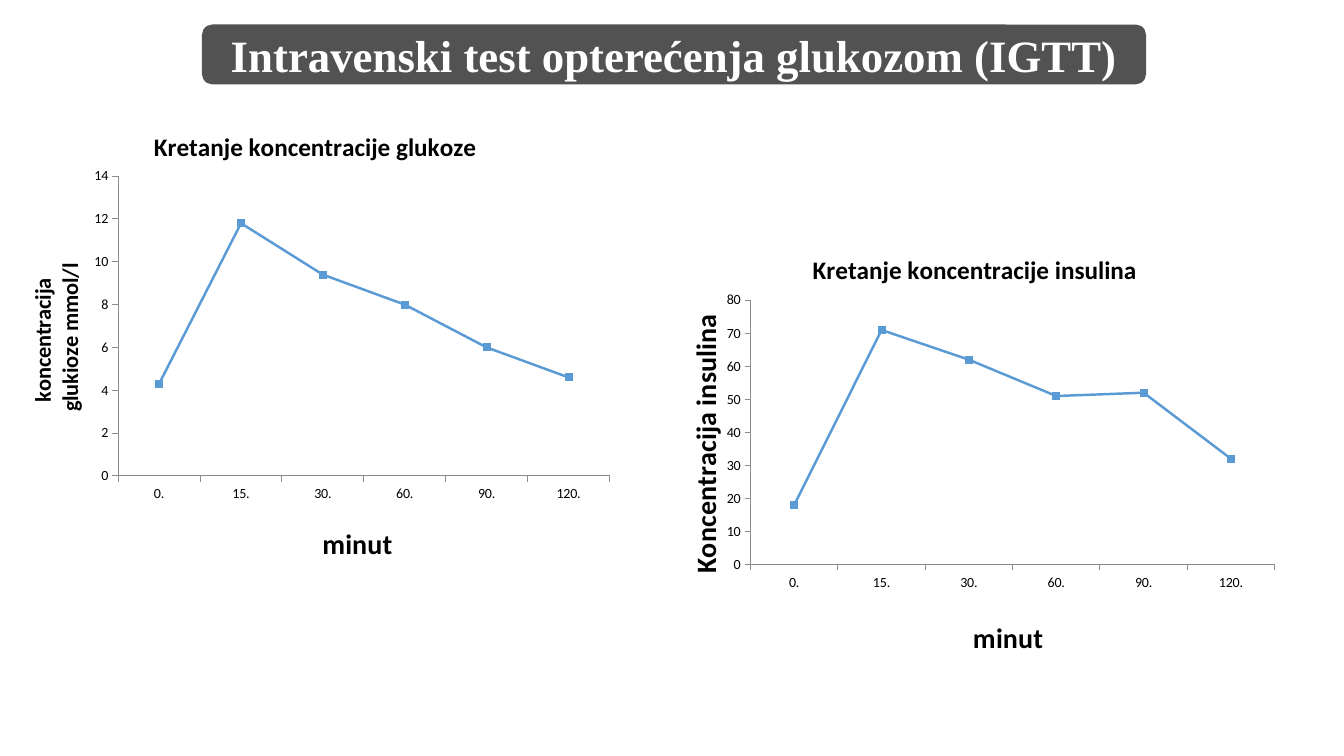
from dataclasses import dataclass

from lxml.etree import SubElement
from pptx import Presentation
from pptx.chart.data import CategoryChartData
from pptx.dml.color import RGBColor
from pptx.enum.chart import XL_CHART_TYPE, XL_MARKER_STYLE, XL_TICK_MARK
from pptx.enum.shapes import MSO_SHAPE
from pptx.enum.text import MSO_ANCHOR, PP_ALIGN
from pptx.oxml.ns import qn
from pptx.util import Emu, Pt

EMU_PER_PX = 9144  # 100 px to the inch
MINUTES = ["0.", "15.", "30.", "60.", "90.", "120."]
BLACK, WHITE, BANNER, AXIS, BLUE = "000000", "FFFFFF", "525252", "8B8B8B", "5B9BD5"


@dataclass
class Curve:
    """A line chart; places are fractions of the chart's own frame."""
    title: str
    value_title: str
    value_size: int
    frame: tuple[int, int, int, int]
    values: list[float]
    maximum: int
    step: int
    plot_place: tuple[float, ...]
    title_place: tuple[float, ...]
    minute_place: tuple[float, ...]
    value_place: tuple[float, ...]


CURVES = [
    Curve("Kretanje koncentracije glukoze", "koncentracija \nglukioze mmol/l", 16,
          (0, 105, 617, 465), [4.3, 11.8, 9.4, 8, 6, 4.6], 14, 2,
          (0.19, 0.15, 0.79, 0.64), (0.24, 0.04), (0.51, 0.88), (0.04, 0.33)),
    Curve("Kretanje koncentracije insulina", "Koncentracija insulina", 20,
          (643, 228, 634, 437), [18, 71, 62, 51, 52, 32], 80, 10,
          (0.16, 0.16, 0.82, 0.6), (0.25, 0.04), (0.5, 0.87), (0.05, 0.18)),
]


def px(length: int) -> Emu:
    return Emu(length * EMU_PER_PX)


def colour(value: str) -> RGBColor:
    return RGBColor.from_string(value)


def set_layout(element, index: int, place: tuple[float, ...], inner: bool = False) -> None:
    """Fix the place of a chart title or of the plot area."""
    for old in element.findall(qn("c:layout")):
        element.remove(old)
    layout = SubElement(element, qn("c:layout"))
    element.insert(index, layout)
    manual = SubElement(layout, qn("c:manualLayout"))
    settings = [("layoutTarget", "inner")] if inner else []
    settings += [("xMode", "edge"), ("yMode", "edge")]
    settings += [(name, str(value)) for name, value in zip("xywh", place)]
    for name, value in settings:
        SubElement(manual, qn(f"c:{name}")).set("val", value)


def write_title(title, text: str, size: int, place: tuple[float, ...]) -> None:
    title.text_frame.text = text
    for paragraph in title.text_frame.paragraphs:
        for span in paragraph.runs:
            span.font.name = "Calibri"
            span.font.size = Pt(size)
            span.font.bold = True
            span.font.color.rgb = colour(BLACK)
    set_layout(title._element, 1, place)


def draw_banner(page, text: str) -> None:
    box = page.shapes.add_shape(MSO_SHAPE.ROUNDED_RECTANGLE, px(201), px(25), px(935), px(58))
    box.shadow.inherit = False
    box.fill.solid()
    box.fill.fore_color.rgb = colour(BANNER)
    box.line.color.rgb = colour(BANNER)
    box.line.width = Pt(1)
    frame = box.text_frame
    frame.vertical_anchor = MSO_ANCHOR.MIDDLE
    frame.text = text
    paragraph = frame.paragraphs[0]
    paragraph.alignment = PP_ALIGN.CENTER
    font = paragraph.runs[0].font
    font.name = "Times New Roman"
    font.size = Pt(32)
    font.bold = True
    font.color.rgb = colour(WHITE)


def draw_curve(page, curve: Curve) -> None:
    data = CategoryChartData()
    data.categories = MINUTES
    data.add_series("Series 1", curve.values)
    chart = page.shapes.add_chart(
        XL_CHART_TYPE.LINE_MARKERS, *map(px, curve.frame), data).chart
    chart.has_legend = False
    chart.font.name = "Calibri"
    chart.font.size = Pt(10)
    chart.font.color.rgb = colour(BLACK)

    # Axes
    for axis in (chart.category_axis, chart.value_axis):
        axis.has_major_gridlines = False
        axis.major_tick_mark = XL_TICK_MARK.OUTSIDE
        axis.minor_tick_mark = XL_TICK_MARK.NONE
        axis.format.line.color.rgb = colour(AXIS)
        axis.format.line.width = Pt(0.75)
    chart.value_axis.minimum_scale = 0
    chart.value_axis.maximum_scale = curve.maximum
    chart.value_axis.major_unit = curve.step

    # Titles and plot area
    write_title(chart.chart_title, curve.title, 18, curve.title_place)
    write_title(chart.category_axis.axis_title, "minut", 20, curve.minute_place)
    value_title = chart.value_axis.axis_title
    write_title(value_title, curve.value_title, curve.value_size, curve.value_place)
    body = value_title._element.find(".//" + qn("a:bodyPr"))
    body.set("rot", "-5400000")
    body.set("vert", "horz")
    plot_area = chart._chartSpace.find(".//" + qn("c:plotArea"))
    set_layout(plot_area, 0, curve.plot_place, inner=True)

    # Line and markers
    chart.plots[0].vary_by_categories = False
    series = chart.plots[0].series[0]
    series.smooth = False
    series.format.line.color.rgb = colour(BLUE)
    series.format.line.width = Pt(1.75)
    series.marker.style = XL_MARKER_STYLE.SQUARE
    series.marker.size = 5
    series.marker.format.fill.solid()
    series.marker.format.fill.fore_color.rgb = colour(BLUE)
    series.marker.format.line.color.rgb = colour(BLUE)


def main() -> None:
    deck = Presentation()
    deck.slide_width, deck.slide_height = px(1333), px(750)
    page = deck.slides.add_slide(deck.slide_layouts[6])
    draw_banner(page, "Intravenski test opterećenja glukozom (IGTT)")
    for curve in CURVES:
        draw_curve(page, curve)
    deck.save("out.pptx")


if __name__ == "__main__":
    main()
